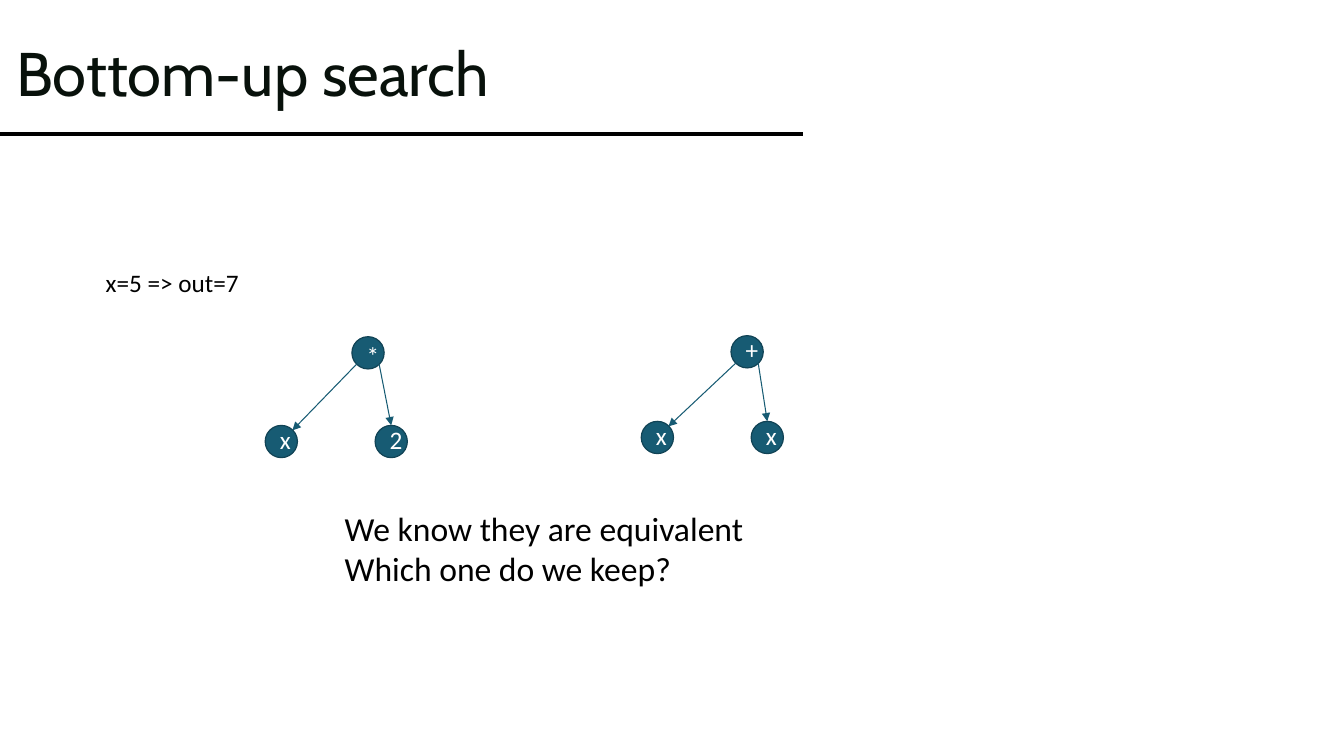
from lxml import etree
from pptx import Presentation
from pptx.dml.color import RGBColor
from pptx.enum.shapes import MSO_CONNECTOR, MSO_SHAPE
from pptx.enum.text import MSO_ANCHOR, MSO_AUTO_SIZE, PP_ALIGN
from pptx.oxml.ns import qn
from pptx.util import Inches, Pt

STRAIGHT = MSO_CONNECTOR.STRAIGHT
OVAL = MSO_SHAPE.OVAL
MIDDLE = MSO_ANCHOR.MIDDLE
LEFT, CENTER = PP_ALIGN.LEFT, PP_ALIGN.CENTER
NO_FIT, GROW = MSO_AUTO_SIZE.NONE, MSO_AUTO_SIZE.SHAPE_TO_FIT_TEXT

BLACK = RGBColor(0x00, 0x00, 0x00)
WHITE = RGBColor(0xFF, 0xFF, 0xFF)
TITLE_INK = RGBColor(0x08, 0x11, 0x0B)
TEAL = RGBColor(0x17, 0x5B, 0x73)
DARK_TEAL = RGBColor(0x11, 0x43, 0x55)

NODE_SIZE = 0.32
SIBLING_GAP = 1.09
NEAR, HALF, FAR = 0.05, 0.16, 0.27


class SlideBuilder:
    title_font = "Cabin"
    body_font = "Calibri"

    def __init__(self, slide):
        self.slide = slide

    def format_text(self, text_frame, font_name, size, color, alignment=LEFT):
        for paragraph in text_frame.paragraphs:
            paragraph.alignment = alignment
            for run in paragraph.runs:
                run.font.name = font_name
                run.font.size = Pt(size)
                run.font.color.rgb = color

    def title(self, text, left, top, width, height):
        shape = self.slide.shapes.title
        shape.left, shape.top = Inches(left), Inches(top)
        shape.width, shape.height = Inches(width), Inches(height)
        text_frame = shape.text_frame
        text_frame.text = text
        text_frame.auto_size = NO_FIT
        text_frame.vertical_anchor = MIDDLE
        text_frame.paragraphs[0].line_spacing = 0.9
        self.format_text(text_frame, self.title_font, 44, TITLE_INK)

    def text(self, text, left, top, width, height, size):
        shape = self.slide.shapes.add_textbox(
            Inches(left), Inches(top), Inches(width), Inches(height))
        text_frame = shape.text_frame
        text_frame.text = text
        text_frame.word_wrap = False
        text_frame.auto_size = GROW
        self.format_text(text_frame, self.body_font, size, BLACK)

    def line(self, start, end, color, weight, arrow=False):
        connector = self.slide.shapes.add_connector(
            STRAIGHT, *(Inches(value) for value in (*start, *end)))
        connector.line.color.rgb = color
        connector.line.width = Pt(weight)
        if arrow:
            etree.SubElement(connector.line._get_or_add_ln(), qn("a:tailEnd"), type="triangle")
        etree.SubElement(connector._element.spPr, qn("a:effectLst"))

    def node(self, label, left, top, inset_top=0):
        shape = self.slide.shapes.add_shape(
            OVAL, Inches(left), Inches(top), Inches(NODE_SIZE), Inches(NODE_SIZE))
        shape.shadow.inherit = False
        shape.fill.solid()
        shape.fill.fore_color.rgb = TEAL
        shape.line.color.rgb = DARK_TEAL
        shape.line.width = Pt(0.85)
        text_frame = shape.text_frame
        text_frame.text = label
        text_frame.word_wrap = True
        text_frame.vertical_anchor = MIDDLE
        text_frame.margin_left = text_frame.margin_right = Inches(0.1)
        text_frame.margin_top = Inches(inset_top)
        text_frame.margin_bottom = Inches(0.05)
        self.format_text(text_frame, self.body_font, 18, WHITE, CENTER)

    def tree(self, labels, root, first_child, root_inset=0):
        operator, first, second = labels
        root_left, root_top = root
        child_left, child_top = first_child
        second_left = child_left + SIBLING_GAP
        self.node(operator, root_left, root_top, root_inset)
        self.node(first, child_left, child_top)
        self.node(second, second_left, child_top)
        self.line((root_left + NEAR, root_top + FAR),
                  (child_left + FAR, child_top + NEAR), TEAL, 0.75, arrow=True)
        self.line((root_left + FAR, root_top + FAR),
                  (second_left + HALF, child_top), TEAL, 0.75, arrow=True)


def main():
    presentation = Presentation()
    presentation.slide_width = Inches(13.33)
    presentation.slide_height = Inches(7.5)
    builder = SlideBuilder(presentation.slides.add_slide(presentation.slide_layouts[5]))
    builder.line((0, 1.33), (7.96, 1.33), BLACK, 2.25)
    builder.title("Bottom-up search", 0.06, 0.03, 7.51, 1.45)
    builder.text("x=5 => out=7", 0.95, 2.6, 1.54, 0.4, 18)
    builder.tree("*x2", (3.49, 3.34), (2.63, 4.22), root_inset=0.1)
    builder.tree("+xx", (7.25, 3.33), (6.36, 4.18))
    builder.text("We know they are equivalent\nWhich one do we keep?",
                 3.32, 4.99, 4.2, 0.91, 24)
    presentation.save("out.pptx")


if __name__ == "__main__":
    main()
